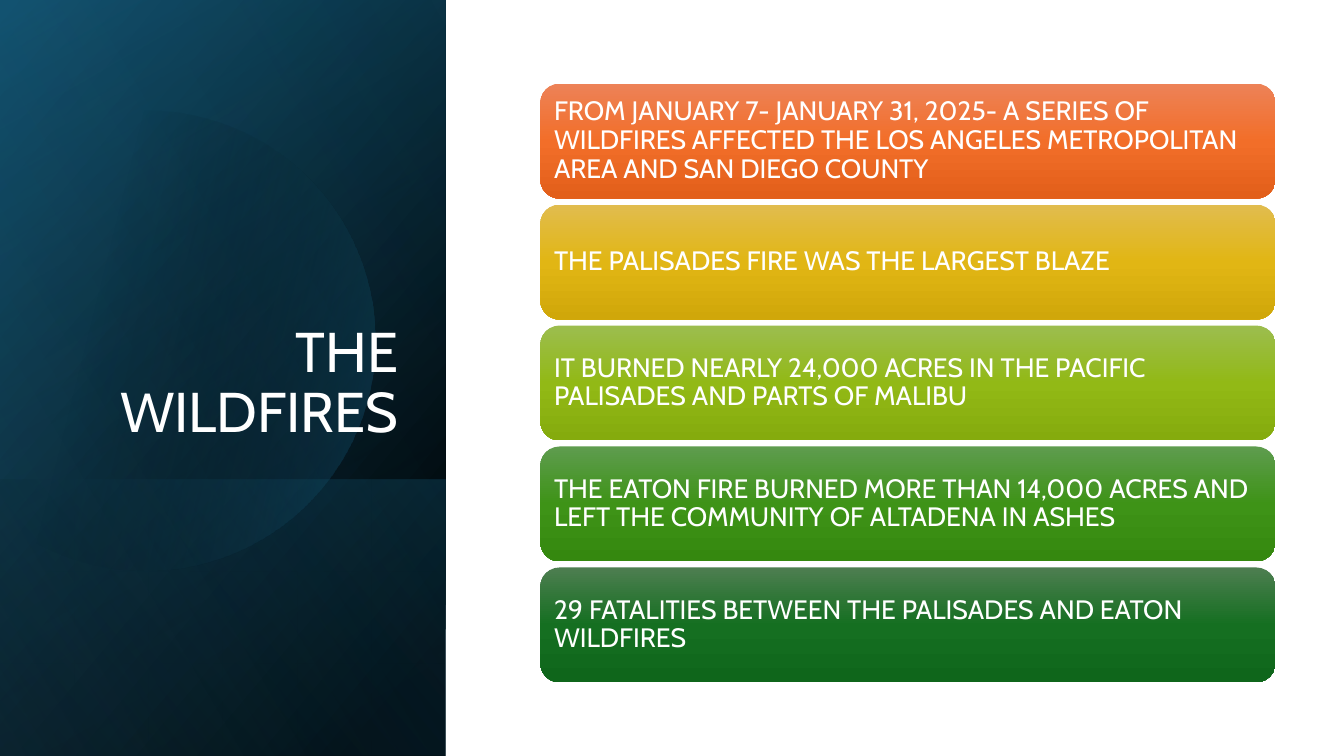
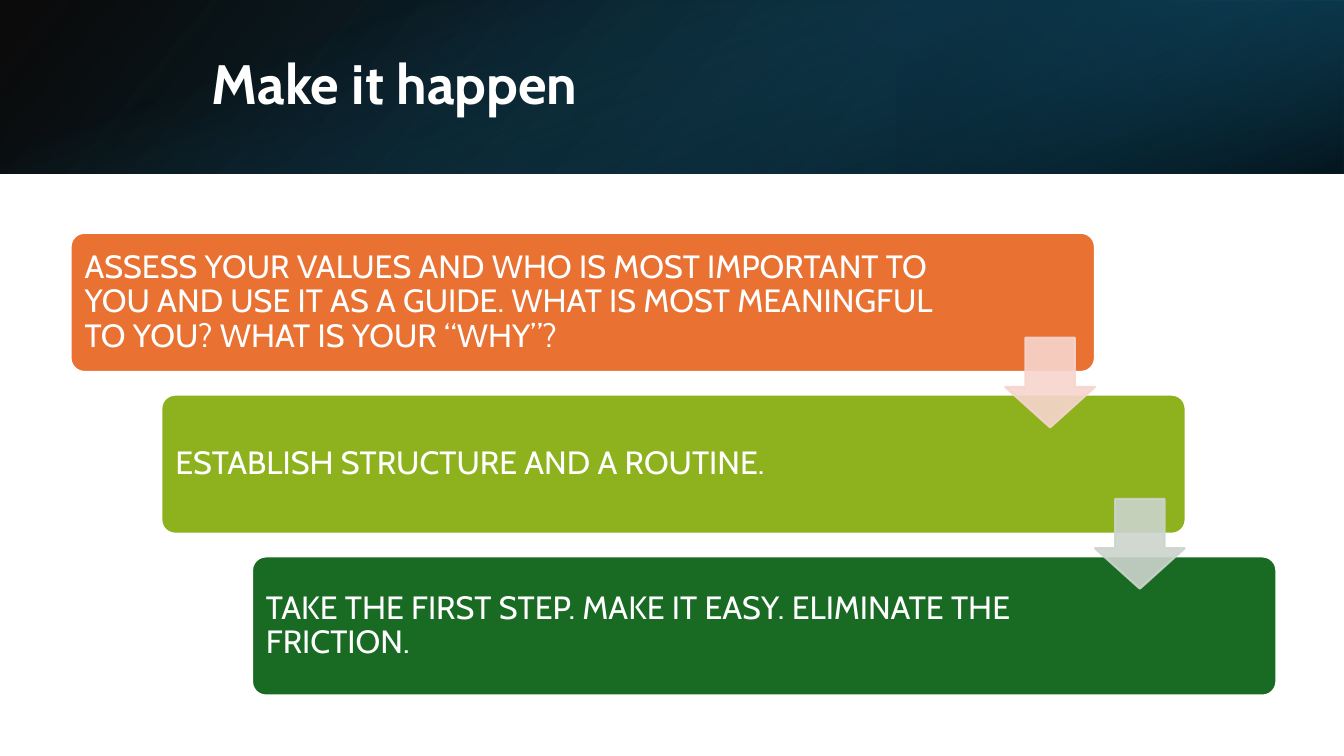
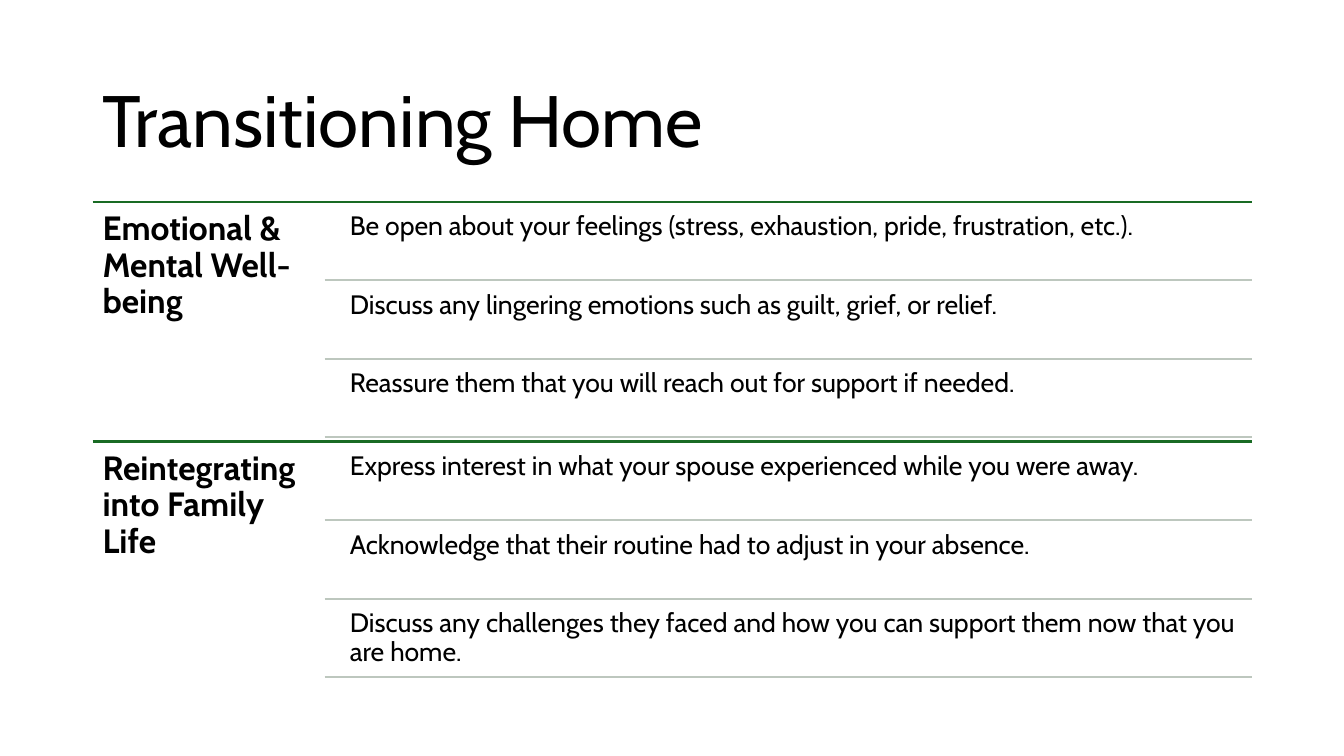
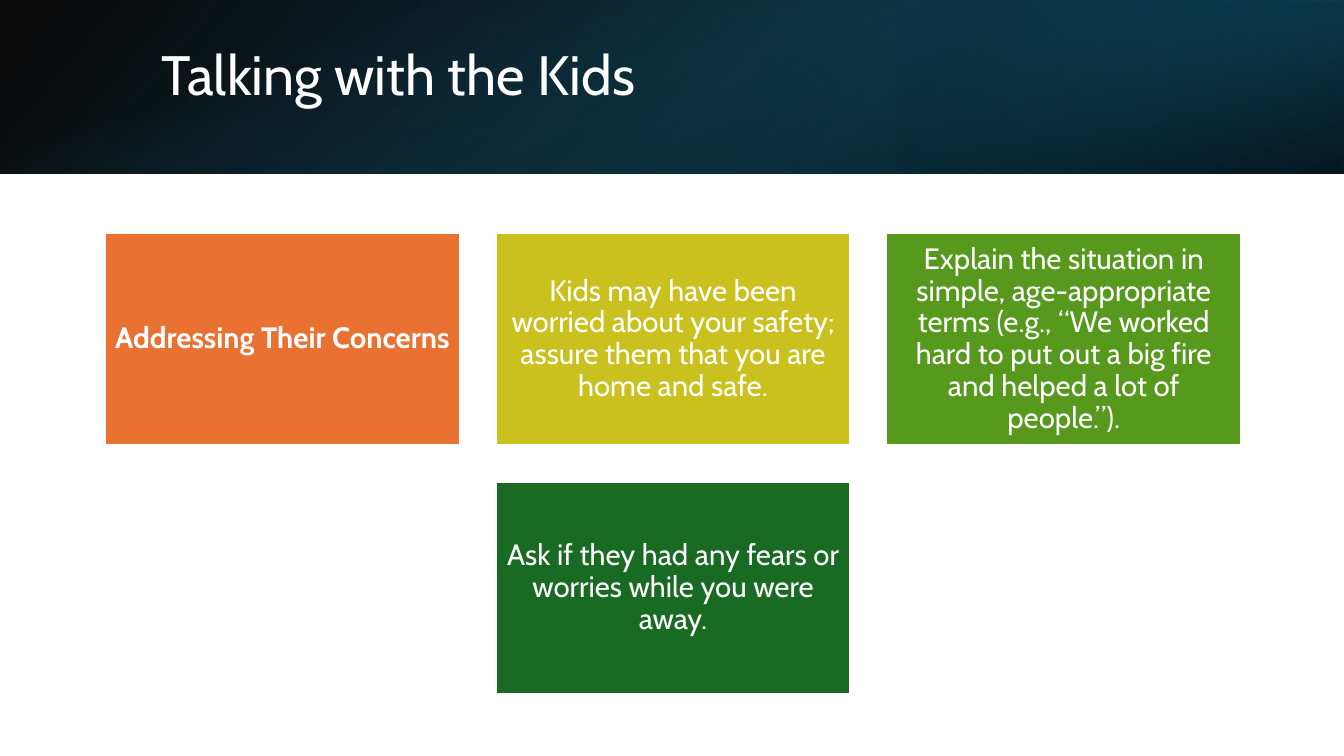
from math import acos, cos, sin

from lxml.etree import SubElement
from pptx import Presentation
from pptx.dml.color import RGBColor
from pptx.enum.shapes import MSO_CONNECTOR, MSO_SHAPE
from pptx.enum.text import MSO_ANCHOR, PP_ALIGN
from pptx.oxml.ns import qn
from pptx.util import Inches, Pt

FONT = "Cabin"
WHITE = RGBColor(0xFF, 0xFF, 0xFF)
BLACK = RGBColor(0x00, 0x00, 0x00)
NAVY = RGBColor(0x10, 0x48, 0x62)
TEAL = RGBColor(0x15, 0x60, 0x82)
DEEP = RGBColor(0x0B, 0x30, 0x41)
SKY = RGBColor(0x46, 0xB1, 0xE1)
ORANGE = RGBColor(0xE9, 0x71, 0x32)
YELLOW = RGBColor(0xCB, 0xC1, 0x1E)
LIME = RGBColor(0x8E, 0xB2, 0x1E)
GRASS = RGBColor(0x56, 0x99, 0x1D)
GREEN = RGBColor(0x19, 0x6B, 0x24)
PINK = RGBColor(0xF7, 0xD5, 0xCE)
MIST = RGBColor(0xCC, 0xD4, 0xCD)
GREY = RGBColor(0xBD, 0xC7, 0xBE)
GLOWS = [
    [RGBColor(0xED, 0x82, 0x57), RGBColor(0xF2, 0x6E, 0x29), RGBColor(0xE2, 0x5F, 0x1A)],
    [RGBColor(0xE1, 0xBC, 0x4E), RGBColor(0xE1, 0xB6, 0x14), RGBColor(0xD0, 0xA7, 0x0A)],
    [RGBColor(0x9C, 0xBD, 0x4E), RGBColor(0x92, 0xB9, 0x16), RGBColor(0x85, 0xAB, 0x0D)],
    [RGBColor(0x5E, 0x9C, 0x4E), RGBColor(0x3E, 0x93, 0x17), RGBColor(0x35, 0x88, 0x0F)],
    [RGBColor(0x4D, 0x7E, 0x50), RGBColor(0x15, 0x6F, 0x21), RGBColor(0x0F, 0x66, 0x1B)],
]
TITLE = {"size": Pt(39.6), "color": WHITE}


def assign(item, form):
    """Set every attribute named in a dict."""
    for key, value in form.items():
        setattr(item, key, value)


def write(shape, text, size, color=WHITE, bold=False, align=PP_ALIGN.LEFT,
          anchor=MSO_ANCHOR.MIDDLE, pad=0.1, right=None, indent=0):
    """Put one styled paragraph into a shape."""
    frame = shape.text_frame
    assign(frame, {
        "word_wrap": True, "vertical_anchor": anchor,
        "margin_left": Inches(pad + indent),
        "margin_right": Inches(pad if right is None else right),
        "margin_top": Inches(pad if anchor == MSO_ANCHOR.TOP else 0),
        "margin_bottom": Inches(0.05 if anchor == MSO_ANCHOR.BOTTOM else 0),
    })
    para = frame.paragraphs[0]
    assign(para, {"alignment": align, "line_spacing": 0.9})
    run = para.add_run()
    run.text = text
    assign(run.font, {"name": FONT, "size": size, "bold": bold})
    run.font.color.rgb = color


def label(slide, box, text, size, **form):
    """Add a text box."""
    write(slide.shapes.add_textbox(*map(Inches, box)), text, size, **form)


def block(slide, kind, box, fill=None, adjust=(), edge=True):
    """Add a flat preset shape with an edge."""
    shape = slide.shapes.add_shape(kind, *map(Inches, box))
    shape.shadow.inherit = False
    for index, value in enumerate(adjust):
        shape.adjustments[index] = value
    if fill is not None:
        shape.fill.solid()
        shape.fill.fore_color.rgb = fill
    if edge:
        shape.line.color.rgb = WHITE
        shape.line.width = Pt(1.5)
    else:
        shape.line.fill.background()
    return shape


def blend(shape, stops, angle):
    """Fill a shape with a gradient of place, colour and opacity."""
    shape.fill.gradient()
    grad = shape._element.spPr.find(qn("a:gradFill"))
    grad.clear()
    grad.set("rotWithShape", "1")
    group = SubElement(grad, qn("a:gsLst"))
    for place, color, alpha in stops:
        stop = SubElement(group, qn("a:gs"), pos=str(place * 1000))
        tint = SubElement(stop, qn("a:srgbClr"), val=str(color))
        if alpha < 100:
            SubElement(tint, qn("a:alpha"), val=str(alpha * 1000))
    SubElement(grad, qn("a:lin"), ang=str(angle * 60000), scaled="0")


def layer(slide, box, stops, angle, turn=0, flip=True):
    """Add one gradient layer of a dark backdrop."""
    shape = block(slide, MSO_SHAPE.RECTANGLE, box, edge=False)
    shape.rotation = turn
    if flip:
        shape._element.spPr.find(qn("a:xfrm")).set("flipH", "1")
    blend(shape, stops, angle)


def disc(slide):
    """Add the round glow cut off at the left edge."""
    x, y, radius, steps = 1.44, 3.38, 2.28, 90
    limit = acos(-x / radius)
    turns = [limit * (2 * i / steps - 1) for i in range(steps + 1)]
    points = [(Inches(x + radius * cos(t)), Inches(y + radius * sin(t))) for t in turns]
    build = slide.shapes.build_freeform(*points[0])
    build.add_line_segments(points[1:], close=True)
    shape = build.convert_to_shape()
    shape.shadow.inherit = False
    shape.line.fill.background()
    blend(shape, [(29, BLACK, 0), (100, TEAL, 43)], 14)


def panel(slide):
    """Add the dark side panel."""
    full = (-1.54, 1.54, 7.5, 4.42)
    layer(slide, full, [(8, BLACK, 100), (100, NAVY, 100)], 50, 90)
    layer(slide, full, [(0, BLACK, 0), (99, TEAL, 46)], 30, 90)
    layer(slide, (0.84, 3.92, 2.74, 4.42), [(2, TEAL, 29), (100, BLACK, 30)], 130, 90)
    disc(slide)
    layer(slide, full, [(0, BLACK, 0), (99, SKY, 11)], 120, 90)


def band(slide):
    """Add the dark band behind a title."""
    layer(slide, (0, 0, 13.33, 1.72), [(0, BLACK, 96), (100, NAVY, 100)], 140)
    layer(slide, (8.89, 0, 4.44, 1.72), [(19, DEEP, 68), (100, TEAL, 79)], 320, 180)
    layer(slide, (5.8, -5.8, 1.72, 13.33), [(23, TEAL, 0), (99, BLACK, 74)], 340, 90, False)


def rule(slide, left, top, color):
    """Draw a level line to the right margin."""
    ends = map(Inches, (left, top, 12.42, top))
    line = slide.shapes.add_connector(MSO_CONNECTOR.STRAIGHT, *ends)
    line.line.color.rgb = color
    line.line.width = Pt(1.5)
    SubElement(line._element.spPr, qn("a:effectLst"))


def arrow(slide, left, top, color):
    """Add a sheer down arrow."""
    shape = block(slide, MSO_SHAPE.DOWN_ARROW, (left, top, 0.89, 0.89), color, (0.55, 0.45))
    shape.line.color.rgb = color
    for tint in shape._element.spPr.iter(qn("a:srgbClr")):
        SubElement(tint, qn("a:alpha"), val="90000")


def fires(slide):
    """Build the slide of wildfire facts."""
    panel(slide)
    label(slide, (0.64, 1.84, 3.41, 2.62), "THE WILDFIRES", Pt(40),
          align=PP_ALIGN.RIGHT, anchor=MSO_ANCHOR.BOTTOM)
    facts = [
        "FROM JANUARY 7- JANUARY 31, 2025- A SERIES OF WILDFIRES AFFECTED THE LOS ANGELES METROPOLITAN AREA AND SAN DIEGO COUNTY",
        "THE PALISADES FIRE WAS THE LARGEST BLAZE",
        "IT BURNED NEARLY 24,000 ACRES IN THE PACIFIC PALISADES AND PARTS OF MALIBU",
        "THE EATON FIRE BURNED MORE THAN 14,000 ACRES AND LEFT THE COMMUNITY OF ALTADENA IN ASHES",
        "29 FATALITIES BETWEEN THE PALISADES AND EATON WILDFIRES",
    ]
    for i, (fact, glow) in enumerate(zip(facts, GLOWS)):
        card = block(slide, MSO_SHAPE.ROUNDED_RECTANGLE, (5.36, 0.83 + 1.2 * i, 7.29, 1.14), edge=False)
        blend(card, [(place, color, 100) for place, color in zip((0, 50, 100), glow)], 90)
        write(card, fact, Pt(19), pad=0.08)


def steps(slide):
    """Build the slide of three steps."""
    band(slide)
    label(slide, (1.5, 0.38, 10.98, 0.96), "Make it happen", bold=True, indent=0.5, **TITLE)
    cards = [
        ("ASSESS YOUR VALUES AND WHO IS MOST IMPORTANT TO YOU AND USE IT AS A GUIDE. WHAT IS MOST MEANINGFUL TO YOU? WHAT IS YOUR “WHY”?", ORANGE, 1.51),
        ("ESTABLISH STRUCTURE AND A ROUTINE.", LIME, 1.89),
        ("TAKE THE FIRST STEP. MAKE IT EASY. ELIMINATE THE FRICTION.", GREEN, 1.89),
    ]
    for i, (text, color, right) in enumerate(cards):
        box = (0.7 + 0.9 * i, 2.31 + 1.605 * i, 10.16, 1.38)
        card = block(slide, MSO_SHAPE.ROUNDED_RECTANGLE, box, color, (0.1,))
        write(card, text, Pt(23), right=right)
    for i, color in enumerate((PINK, MIST)):
        arrow(slide, 9.97 + 0.89 * i, 3.35 + 1.6 * i, color)


def home(slide):
    """Build the slide of ruled topics."""
    label(slide, (0.92, 0.61, 11.5, 1.24), "Transitioning Home", Pt(52), color=BLACK)
    topics = {
        "Emotional & Mental Well-being": [
            "Be open about your feelings (stress, exhaustion, pride, frustration, etc.).",
            "Discuss any lingering emotions such as guilt, grief, or relief.",
            "Reassure them that you will reach out for support if needed.",
        ],
        "Reintegrating into Family Life": [
            "Express interest in what your spouse experienced while you were away.",
            "Acknowledge that their routine had to adjust in your absence.",
            "Discuss any challenges they faced and how you can support them now that you are home.",
        ],
    }
    form = {"color": BLACK, "anchor": MSO_ANCHOR.TOP}
    for i, (topic, notes) in enumerate(topics.items()):
        top = 2 + 2.38 * i
        rule(slide, 0.92, top, GREEN)
        label(slide, (0.92, top, 2.3, 2.38), topic, Pt(24), bold=True, **form)
        for j, note in enumerate(notes):
            start = top + 0.78 * j
            label(slide, (3.39, start + 0.03, 9.03, 0.74), note, Pt(19), pad=0.08, **form)
            rule(slide, 3.22, start + 0.78, GREY)


def kids(slide):
    """Build the slide of four tiles."""
    band(slide)
    label(slide, (1.5, 0.29, 10.98, 0.96), "Talking with the Kids", **TITLE)
    tiles = [
        (0, 0, "Addressing Their Concerns", ORANGE),
        (1, 0, "Kids may have been worried about your safety; assure them that you are home and safe.", YELLOW),
        (2, 0, "Explain the situation in simple, age-appropriate terms (e.g., “We worked hard to put out a big fire and helped a lot of people.”).", GRASS),
        (1, 1, "Ask if they had any fears or worries while you were away.", GREEN),
    ]
    for col, row, text, color in tiles:
        box = (1.04 + 3.875 * col, 2.31 + 2.47 * row, 3.52, 2.11)
        tile = block(slide, MSO_SHAPE.RECTANGLE, box, color)
        write(tile, text, Pt(21), bold=col == 0, align=PP_ALIGN.CENTER, pad=0.09)


def main():
    """Build and save the deck."""
    deck = Presentation()
    assign(deck, {"slide_width": Inches(13.33), "slide_height": Inches(7.5)})
    for build in (fires, steps, home, kids):
        build(deck.slides.add_slide(deck.slide_layouts[6]))
    deck.save("out.pptx")


if __name__ == "__main__":
    main()
